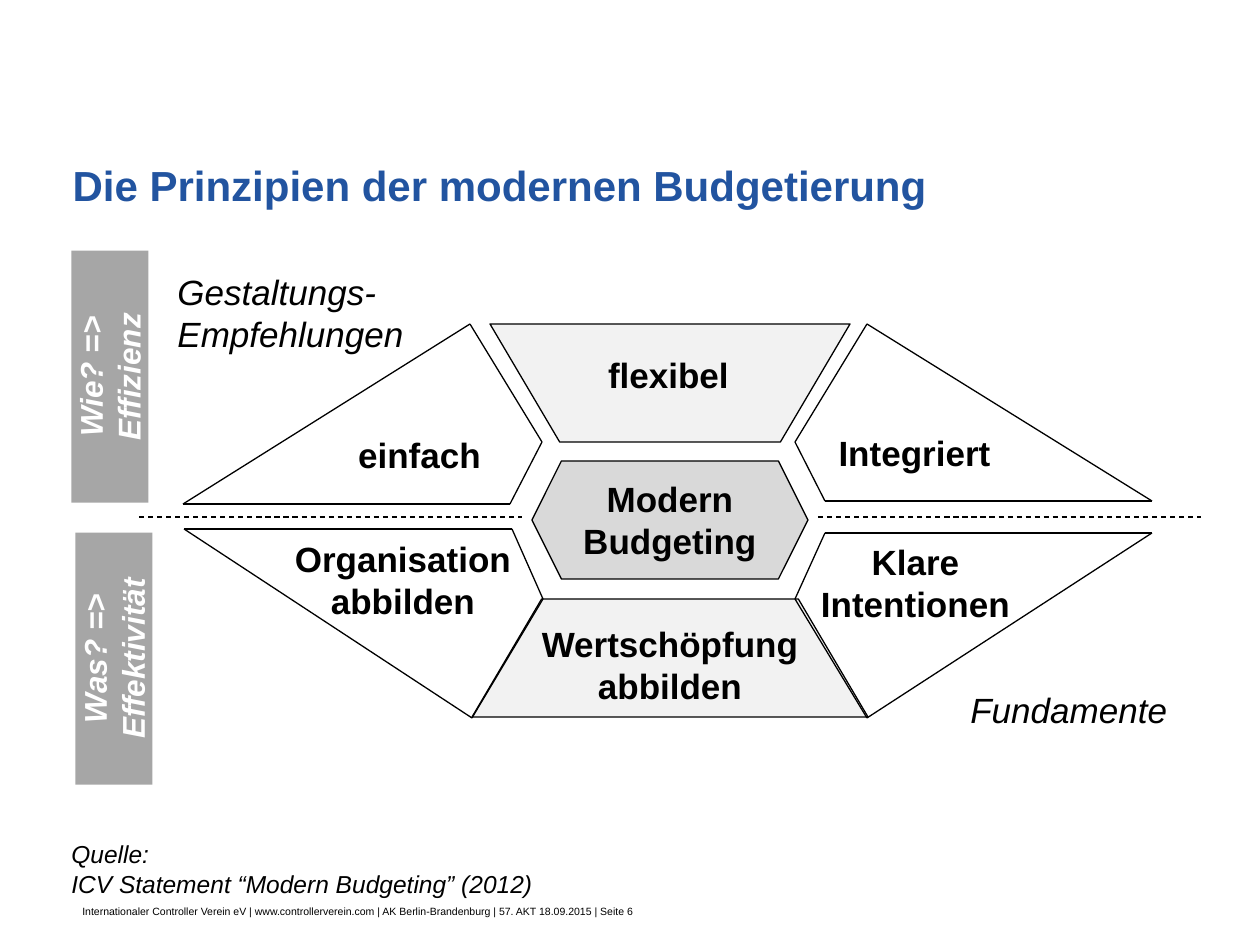
from pptx import Presentation
from pptx.dml.color import RGBColor as RGB
from pptx.enum.dml import MSO_LINE
from pptx.enum.shapes import MSO_CONNECTOR as CONN, MSO_SHAPE as SHAPE
from pptx.enum.text import MSO_ANCHOR as ANCHOR, PP_ALIGN as ALIGN
from pptx.oxml.ns import qn
from pptx.util import Emu, Pt
from lxml import etree

PX = 914400 / 126  # EMU per pixel

THEME = {
    "font": "Arial",
    "ink": RGB(0, 0, 0), "white": RGB(255, 255, 255),
    "title": RGB(0x22, 0x54, 0xA0), "bar": RGB(0xA6, 0xA6, 0xA6),
    "core": RGB(0xD9, 0xD9, 0xD9), "panel": RGB(0xF2, 0xF2, 0xF2),
    "line": Pt(0.75),
    "title_size": Pt(24), "label_size": Pt(20), "bar_size": Pt(18),
    "source_size": Pt(14), "footer_size": Pt(6),
}


def box(*px):
    return [Emu(round(v * PX)) for v in px]


def write(sp, text, size, color="ink", align=ALIGN.LEFT, anchor=ANCHOR.TOP,
          wrap=True, **style):
    tf = sp.text_frame
    tf.word_wrap, tf.vertical_anchor = wrap, anchor
    p = tf.paragraphs[0]
    p.text, p.alignment, p.space_before = text, align, Pt(0)
    formats = {"name": THEME["font"], "size": THEME[size], **style}
    for r in p.runs:
        for key, value in formats.items():
            setattr(r.font, key, value)
        r.font.color.rgb = THEME[color]


prs = Presentation()
prs.slide_width, prs.slide_height = box(1260, 945)
s = prs.slides.add_slide(prs.slide_layouts[5])
shapes = s.shapes

# Title
title = shapes.title
title.left, title.top, title.width, title.height = box(60, 153, 1148, 63)
write(title, "Die Prinzipien der modernen Budgetierung", "title_size", "title",
      anchor=ANCHOR.MIDDLE, bold=True)

# Core hexagon and the panels above and below it
for kind, place, fill, turn, text in [
    (SHAPE.HEXAGON, (532, 461, 276, 118), "core", 0, "Modern Budgeting"),
    (SHAPE.TRAPEZOID, (472, 599, 396, 118), "panel", 0, "Wertschöpfung abbilden"),
    (SHAPE.TRAPEZOID, (490, 324, 360, 118), "panel", 180, ""),
]:
    sp = shapes.add_shape(kind, *box(*place))
    sp.shadow.inherit = False
    sp.rotation = turn
    if kind == SHAPE.TRAPEZOID:
        sp.adjustments[0] = 0.59
    sp.fill.solid()
    sp.fill.fore_color.rgb = THEME[fill]
    sp.line.color.rgb, sp.line.width = THEME["ink"], THEME["line"]
    write(sp, text, "label_size", align=ALIGN.CENTER, anchor=ANCHOR.MIDDLE, bold=True)

# Corner edges, then the dashed divider left and right of the core
corners = [
    [(183, 504), (470, 324), (542, 442), (510, 504)],
    [(1152, 501), (867, 324), (795, 442), (825, 501)],
    [(184, 529), (472, 718), (543, 599), (512, 529)],
    [(1152, 533), (867, 718), (795, 599), (825, 533)],
]
edges = [(a, b, None) for c in corners for a, b in zip(c, c[1:] + c[:1])]
edges += [((x, 517), (x + 383, 517), MSO_LINE.DASH) for x in (139, 818)]
for start, end, dash in edges:
    edge = shapes.add_connector(CONN.STRAIGHT, *box(*start, *end))
    edge.line.color.rgb, edge.line.width = THEME["ink"], THEME["line"]
    edge.line.dash_style = dash
    etree.SubElement(edge._element.spPr, qn("a:effectLst"))

# Principle labels
for text, place in [
    ("flexibel", (550, 347, 237, 55)),
    ("einfach", (301, 427, 237, 55)),
    ("Integriert", (811, 425, 207, 55)),
    ("Organisation abbilden", (273, 531, 260, 97)),
    ("Klare Intentionen", (802, 513, 227, 140)),
]:
    write(shapes.add_textbox(*box(*place)), text, "label_size",
          align=ALIGN.CENTER, anchor=ANCHOR.MIDDLE, bold=True)

# Italic captions and source
for text, place, size in [
    ("Gestaltungs-Empfehlungen", (165, 264, 336, 97), "label_size"),
    ("Fundamente", (958, 682, 227, 97), "label_size"),
    ("Quelle:\vICV Statement “Modern Budgeting” (2012)", (59, 833, 703, 72), "source_size"),
]:
    write(shapes.add_textbox(*box(*place)), text, size, italic=True)

# Rotated side bars
for text, left, top in [("Was? => Effektivität", -12, 620), ("Wie? => Effizienz", -16, 338)]:
    sp = shapes.add_shape(SHAPE.RECTANGLE, *box(left, top, 252, 77))
    sp.shadow.inherit = False
    sp.rotation = 270
    sp.fill.solid()
    sp.fill.fore_color.rgb = THEME["bar"]
    sp.line.fill.background()
    for side in ("left", "top", "right", "bottom"):
        setattr(sp.text_frame, f"margin_{side}", 0)
    write(sp, text, "bar_size", "white", align=ALIGN.CENTER, bold=True, italic=True)

# Footer
write(shapes.add_textbox(*box(70, 899, 607, 25)),
      "Internationaler Controller Verein eV | www.controllerverein.com | "
      "AK Berlin-Brandenburg | 57. AKT 18.09.2015 | Seite 6",
      "footer_size", wrap=False)

prs.save("out.pptx")
